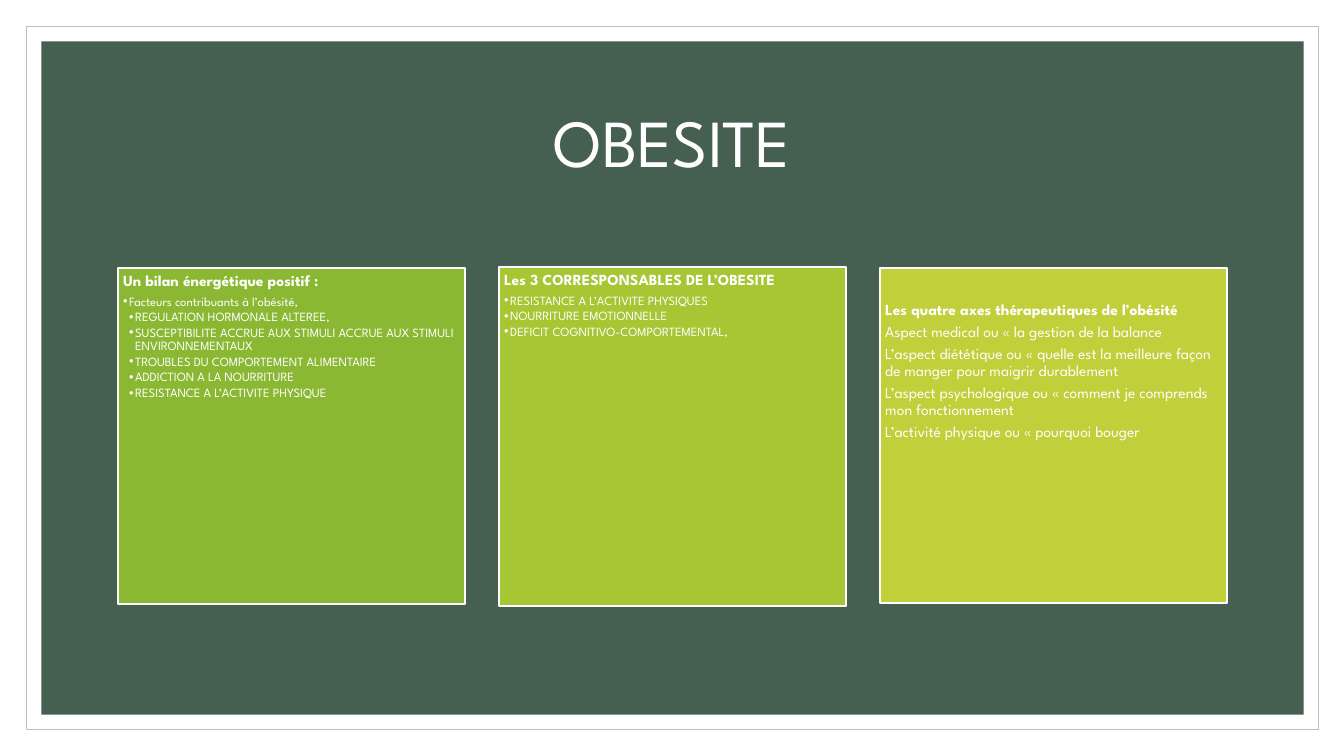
from lxml.etree import SubElement
from pptx import Presentation
from pptx.dml.color import RGBColor
from pptx.enum.shapes import MSO_SHAPE
from pptx.enum.text import MSO_ANCHOR, MSO_AUTO_SIZE, PP_ALIGN
from pptx.oxml.ns import qn
from pptx.util import Inches, Pt

FONT = "League Spartan"
WHITE = "FFFFFF"
CARD_LEFT, CARD_STEP, CARD_WIDTH = 1.17, 3.78, 3.44
BULLET_STEP = 0.06

# Each card: fill, top, height, top inset, paragraphs (bullet level, text);
# level 0 has no bullet, and the first paragraph is the heading
CARDS = [
    ("8AB833", 2.66, 3.33, 0.05, [
        (0, "Un bilan énergétique positif :"),
        (1, "Facteurs contribuants à l’obésité,"),
        (2, "REGULATION HORMONALE ALTEREE,"),
        (2, "SUSCEPTIBILITE ACCRUE AUX STIMULI ACCRUE AUX STIMULI ENVIRONNEMENTAUX"),
        (2, "TROUBLES DU COMPORTEMENT ALIMENTAIRE"),
        (2, "ADDICTION A LA NOURRITURE"),
        (2, "RESISTANCE A L’ACTIVITE PHYSIQUE"),
    ]),
    ("A6C634", 2.65, 3.36, 0.05, [
        (0, "Les 3 CORRESPONSABLES DE L’OBESITE"),
        (1, "RESISTANCE A L’ACTIVITE PHYSIQUES"),
        (1, "NOURRITURE EMOTIONNELLE"),
        (1, "DEFICIT COGNITIVO-COMPORTEMENTAL,"),
    ]),
    ("C0CF3A", 2.66, 3.32, 0.34, [
        (0, "Les quatre axes thérapeutiques de l’obésité"),
        (0, "Aspect medical ou « la gestion de la balance"),
        (0, "L’aspect diététique ou « quelle est la meilleure façon de manger "
            "pour maigrir durablement"),
        (0, "L’aspect psychologique ou « comment je comprends mon fonctionnement"),
        (0, "L’activité physique ou « pourquoi bouger"),
    ]),
]


def rgb(color):
    return RGBColor.from_string(color)


def place(sp, left, top, width, height):
    sp.left, sp.top = Inches(left), Inches(top)
    sp.width, sp.height = Inches(width), Inches(height)


def paint(sp, fill, line=None, weight=0):
    sp.fill.solid()
    sp.fill.fore_color.rgb = rgb(fill)
    if line:
        sp.line.color.rgb = rgb(line)
        sp.line.width = Pt(weight)
    else:
        sp.line.fill.background()


def add_panel(s, box, fill, line=None, weight=0):
    sp = s.shapes.add_shape(MSO_SHAPE.RECTANGLE, *[Inches(v) for v in box])
    sp.shadow.inherit = False
    paint(sp, fill, line, weight)
    # Panels lie behind the placeholders
    s.shapes._spTree.remove(sp._element)
    return sp._element


def add_run(p, text, size, bold=False):
    r = p.add_run()
    r.text = text
    r.font.name = FONT
    r.font.size = Pt(size)
    r.font.bold = bold
    r.font.color.rgb = rgb(WHITE)


def set_bullet(p, level):
    pPr = p._p.get_or_add_pPr()
    pPr.set("marL", str(Inches(BULLET_STEP * level)))
    pPr.set("indent", str(-Inches(BULLET_STEP) if level else 0))
    if level:
        SubElement(pPr, qn("a:buChar")).set("char", "•")
    else:
        SubElement(pPr, qn("a:buNone"))


def fill_title(sp, text):
    place(sp, 1.17, 0.7, 11, 1.5)
    tf = sp.text_frame
    tf.vertical_anchor = MSO_ANCHOR.MIDDLE
    tf.auto_size = MSO_AUTO_SIZE.NONE
    p = tf.paragraphs[0]
    p.alignment = PP_ALIGN.CENTER
    p.line_spacing = 0.9
    add_run(p, text, 48)


def fill_card(sp, left, card):
    fill, top, height, top_inset, lines = card
    place(sp, left, top, CARD_WIDTH, height)
    paint(sp, fill, WHITE, 1.5)
    tf = sp.text_frame
    tf.word_wrap = True
    tf.auto_size = MSO_AUTO_SIZE.NONE
    tf.vertical_anchor = MSO_ANCHOR.TOP
    tf.margin_left = tf.margin_right = tf.margin_bottom = Inches(0.05)
    tf.margin_top = Inches(top_inset)
    for i, (level, text) in enumerate(lines):
        p = tf.add_paragraph() if i else tf.paragraphs[0]
        p.level = level
        p.alignment = PP_ALIGN.LEFT
        p.line_spacing = 0.9
        p.space_before = Pt(0)
        p.space_after = Pt(1.35 if level else 3.85)
        set_bullet(p, level)
        add_run(p, text, 9 if level else 11, bold=i == 0)


def main():
    prs = Presentation()
    prs.slide_width, prs.slide_height = Inches(13.33), Inches(7.5)
    s = prs.slides.add_slide(prs.slide_layouts.get_by_name("Comparison"))

    # Frame and green background
    panels = [
        add_panel(s, (0.26, 0.26, 12.82, 6.98), WHITE, "BFBFBF", 0.5),
        add_panel(s, (0.41, 0.41, 12.52, 6.68), "455F51"),
    ]
    for i, panel in enumerate(panels):
        s.shapes._spTree.insert(2 + i, panel)

    # Title and the three cards
    title, *bodies = s.placeholders
    fill_title(title, "OBESITE")
    for i, (sp, card) in enumerate(zip(bodies, CARDS)):
        fill_card(sp, CARD_LEFT + i * CARD_STEP, card)

    # The layout has one body more than there are cards
    for sp in bodies[len(CARDS):]:
        sp._element.getparent().remove(sp._element)

    prs.save("out.pptx")


if __name__ == "__main__":
    main()
